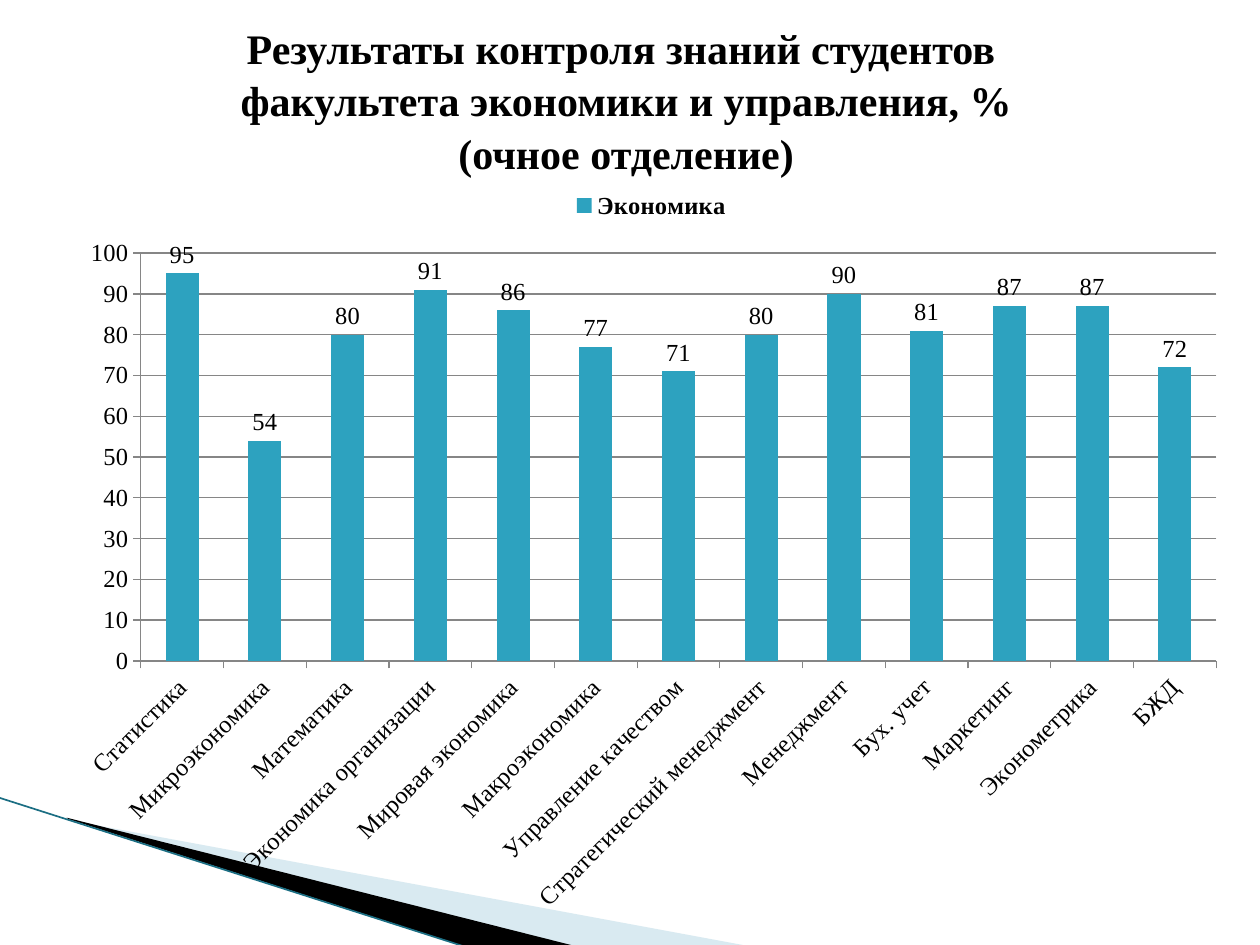
from lxml.etree import SubElement
from pptx import Presentation
from pptx.chart.data import CategoryChartData
from pptx.dml.color import RGBColor
from pptx.enum.chart import XL_CHART_TYPE, XL_LABEL_POSITION, XL_LEGEND_POSITION, XL_TICK_MARK
from pptx.enum.shapes import MSO_CONNECTOR
from pptx.enum.text import MSO_ANCHOR, PP_ALIGN
from pptx.oxml.ns import qn
from pptx.util import Inches, Pt

TITLE = ["Результаты контроля знаний студентов ",
         "факультета экономики и управления, %",
         "(очное отделение)"]
SERIES = "Экономика"
RESULTS = {
    "Статистика": 95, "Микроэкономика": 54, "Математика": 80,
    "Экономика организации": 91, "Мировая экономика": 86,
    "Макроэкономика": 77, "Управление качеством": 71,
    "Стратегический менеджмент": 80, "Менеджмент": 90,
    "Бух. учет": 81, "Маркетинг": 87, "Эконометрика": 87, "БЖД": 72,
}
THEME = {"font": "Times New Roman", "title": Pt(24), "body": Pt(14),
         "text": "000000", "bar": "2DA2BF", "grid": "868686",
         "pale": "A0CBDC", "dark": "000000", "edge": "1B6E83"}
WEDGES = [
    ("pale", 40, [(0.55, 6.51), (5.95, 7.51), (4.56, 7.51), (0.55, 6.5)]),
    ("dark", 100, [(0.53, 6.49), (4.57, 7.51), (3.72, 7.52), (0.54, 6.5)]),
]
EDGE = (-0.01, 6.33, 3.71, 7.52)
TITLE_BOX = (0.47, 0.16, 9, 1.25)
CHART_BOX = (0.5, 1.41, 9.34, 5.94)


def rgb(key):
    return RGBColor.from_string(THEME[key])


def inches(values):
    return [Inches(v) for v in values]


def assign(obj, formats):
    for name, value in formats.items():
        setattr(obj, name, value)


def style_font(font, size, bold):
    assign(font, {"name": THEME["font"], "size": THEME[size], "bold": bold})
    font.color.rgb = rgb("text")


def style_line(line, key, width):
    line.color.rgb = rgb(key)
    line.width = Pt(width)


def add_wedge(s, key, opacity, points):
    start, *rest = [inches(pt) for pt in points]
    builder = s.shapes.build_freeform(*start)
    builder.add_line_segments(rest)
    sp = builder.convert_to_shape()
    sp.shadow.inherit = False
    sp.fill.solid()
    sp.fill.fore_color.rgb = rgb(key)
    sp.line.fill.background()
    if opacity < 100:
        clr = sp.fill._xPr.find(".//" + qn("a:srgbClr"))
        SubElement(clr, qn("a:alpha"), val=str(opacity * 1000))


def add_edge(s):
    cx = s.shapes.add_connector(MSO_CONNECTOR.STRAIGHT, *inches(EDGE))
    style_line(cx.line, "edge", 0.95)
    SubElement(cx._element.spPr, qn("a:effectLst"))


def add_title(s):
    tf = s.shapes.add_textbox(*inches(TITLE_BOX)).text_frame
    assign(tf, {"word_wrap": True, "vertical_anchor": MSO_ANCHOR.MIDDLE})
    p = tf.paragraphs[0]
    p.text = "\v".join(TITLE)
    assign(p, {"alignment": PP_ALIGN.CENTER, "line_spacing": 1.05})
    for r in p.runs:
        style_font(r.font, "title", True)


def add_results(s):
    data = CategoryChartData()
    data.categories = list(RESULTS)
    data.add_series(SERIES, list(RESULTS.values()))
    chart = s.shapes.add_chart(XL_CHART_TYPE.COLUMN_CLUSTERED,
                               *inches(CHART_BOX), data).chart
    assign(chart, {"has_title": False, "has_legend": True})
    style_font(chart.font, "body", False)
    assign(chart.legend, {"position": XL_LEGEND_POSITION.TOP,
                          "include_in_layout": False})
    style_font(chart.legend.font, "body", True)

    plot = chart.plots[0]
    assign(plot, {"gap_width": 150, "vary_by_categories": False,
                  "has_data_labels": True})
    assign(plot.data_labels, {"show_value": True,
                              "position": XL_LABEL_POSITION.OUTSIDE_END})
    style_font(plot.data_labels.font, "body", False)
    fill = plot.series[0].format.fill
    fill.solid()
    fill.fore_color.rgb = rgb("bar")

    for axis in (chart.category_axis, chart.value_axis):
        assign(axis, {"major_tick_mark": XL_TICK_MARK.OUTSIDE,
                      "minor_tick_mark": XL_TICK_MARK.NONE})
        style_line(axis.format.line, "grid", 0.75)
        style_font(axis.tick_labels.font, "body", False)
    assign(chart.value_axis, {"minimum_scale": 0, "maximum_scale": 100,
                              "major_unit": 10, "has_major_gridlines": True})
    style_line(chart.value_axis.major_gridlines.format.line, "grid", 0.75)
    body = chart.category_axis._element.find(".//" + qn("a:bodyPr"))
    body.set("rot", "-2700000")


def main():
    prs = Presentation()
    assign(prs, {"slide_width": Inches(10), "slide_height": Inches(7.5)})
    s = prs.slides.add_slide(prs.slide_layouts[6])
    for wedge in WEDGES:
        add_wedge(s, *wedge)
    add_edge(s)
    add_title(s)
    add_results(s)
    prs.save("out.pptx")


if __name__ == "__main__":
    main()
